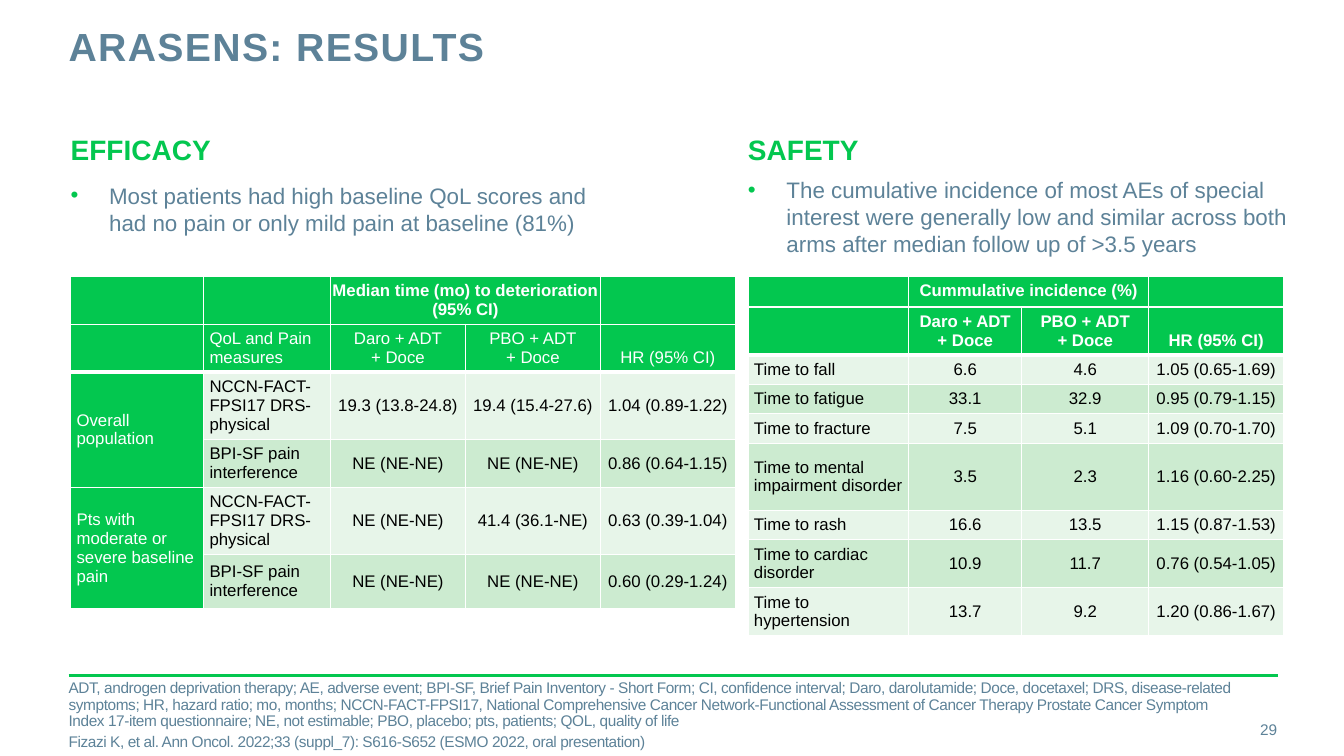
from dataclasses import dataclass

from lxml.etree import SubElement
from pptx import Presentation
from pptx.dml.color import RGBColor as Color
from pptx.enum.text import MSO_ANCHOR as Anchor, MSO_AUTO_SIZE as AutoSize, PP_ALIGN as Align
from pptx.oxml.ns import qn
from pptx.util import Cm, Pt


@dataclass(frozen=True)
class Theme:
    font: str = "Arial"
    green: str = "03C74F"
    slate: str = "5D8298"
    light: str = "E7F5E9"
    dark: str = "CCEBD0"
    white: str = "FFFFFF"
    black: str = "000000"
    title: int = 28
    heading: int = 20
    body: int = 16
    table: int = 12
    note: int = 11


THEME = Theme()
COMPARISON_LAYOUT = 4
HEADER_ROWS = 2

EFFICACY_COLUMNS = [3.35, 3.2, 3.4, 3.4, 3.4]
EFFICACY_HEIGHTS = [1.2, 1.2, 1.69, 1.2, 1.69, 1.37]
EFFICACY_ROWS = [
    ["", "", "Median time (mo) to deterioration\n(95% CI)", "", ""],
    ["", "QoL and Pain measures", "Daro + ADT\n+ Doce", "PBO + ADT\n+ Doce", "HR (95% CI)"],
    ["Overall\npopulation", "NCCN-FACT-FPSI17 DRS-physical",
     "19.3 (13.8-24.8)", "19.4 (15.4-27.6)", "1.04 (0.89-1.22)"],
    ["", "BPI-SF pain interference", "NE (NE-NE)", "NE (NE-NE)", "0.86 (0.64-1.15)"],
    ["Pts with moderate or severe baseline pain", "NCCN-FACT-FPSI17 DRS-physical",
     "NE (NE-NE)", "41.4 (36.1-NE)", "0.63 (0.39-1.04)"],
    ["", "BPI-SF pain interference", "NE (NE-NE)", "NE (NE-NE)", "0.60 (0.29-1.24)"],
]

SAFETY_COLUMNS = [4.05, 2.85, 3.2, 3.4]
SAFETY_HEIGHTS = [0.74, 1.2, 0.74, 0.74, 0.74, 1.69, 0.74, 1.2, 1.2]
SAFETY_ROWS = [
    ["", "Cummulative incidence (%)", "", ""],
    ["", "Daro + ADT\n+ Doce", "PBO + ADT\n+ Doce", "HR (95% CI)"],
    ["Time to fall", "6.6", "4.6", "1.05 (0.65-1.69)"],
    ["Time to fatigue", "33.1", "32.9", "0.95 (0.79-1.15)"],
    ["Time to fracture", "7.5", "5.1", "1.09 (0.70-1.70)"],
    ["Time to mental impairment disorder", "3.5", "2.3", "1.16 (0.60-2.25)"],
    ["Time to rash", "16.6", "13.5", "1.15 (0.87-1.53)"],
    ["Time to cardiac disorder", "10.9", "11.7", "0.76 (0.54-1.05)"],
    ["Time to hypertension", "13.7", "9.2", "1.20 (0.86-1.67)"],
]

NOTES = [
    "ADT, androgen deprivation therapy; AE, adverse event; BPI-SF, Brief Pain Inventory - Short Form; "
    "CI, confidence interval; Daro, darolutamide; Doce, docetaxel; DRS, disease-related symptoms; "
    "HR, hazard ratio; mo, months; NCCN-FACT-FPSI17, National Comprehensive Cancer Network-Functional "
    "Assessment of Cancer Therapy Prostate Cancer Symptom Index 17-item questionnaire; "
    "NE, not estimable; PBO, placebo; pts, patients; QOL, quality of life",
    "Fizazi K, et al. Ann Oncol. 2022;33 (suppl_7): S616-S652 (ESMO 2022, oral presentation)",
]


def write(para, text, size, color, bold=False, align=Align.LEFT, line=None, after=0, tracking=None):
    """Fill a paragraph; line feeds become line breaks."""
    para.text = text
    para.alignment = align
    para.line_spacing = line
    para.space_before, para.space_after = Pt(0), Pt(after)
    for span in para.runs:
        span.font.name, span.font.size, span.font.bold = THEME.font, Pt(size), bold
        span.font.color.rgb = Color.from_string(color)
        if tracking:
            span.font._element.set("spc", str(round(tracking * 100)))
    if not text:
        SubElement(para._p, qn("a:endParaRPr"), sz=str(size * 100))


def place(shape, left, top, width, height, anchor=Anchor.TOP, insets=(0, 0, 0, 0)):
    """Position a text shape and return its first paragraph."""
    shape.left, shape.top, shape.width, shape.height = Cm(left), Cm(top), Cm(width), Cm(height)
    frame = shape.text_frame
    frame.word_wrap, frame.auto_size, frame.vertical_anchor = True, AutoSize.NONE, anchor
    frame.margin_left, frame.margin_top, frame.margin_right, frame.margin_bottom = map(Cm, insets)
    return frame.paragraphs[0]


def add_bullet(para):
    props = para._p.get_or_add_pPr()
    props.set("marL", str(Cm(0.97)))
    props.set("indent", str(-Cm(0.97)))
    SubElement(SubElement(props, qn("a:buClr")), qn("a:srgbClr"), val=THEME.green)
    SubElement(props, qn("a:buFont"), typeface=THEME.font)
    SubElement(props, qn("a:buChar"), char="•")


def add_borders(cell, row):
    """White grid, heavier between the header and the body."""
    heavy = {HEADER_ROWS - 1: "lnB", HEADER_ROWS: "lnT"}.get(row)
    for side in ("lnL", "lnR", "lnT", "lnB"):
        weight = Pt(3 if side == heavy else 1)
        edge = SubElement(cell._tc.get_or_add_tcPr(), qn(f"a:{side}"), w=str(weight))
        SubElement(SubElement(edge, qn("a:solidFill")), qn("a:srgbClr"), val=THEME.white)


def format_cell(cell, text, row, column, labels, bold_rows):
    header = row < HEADER_ROWS
    green = header or column < labels - 1
    add_borders(cell, row)
    cell.fill.solid()
    band = THEME.dark if row % 2 else THEME.light
    cell.fill.fore_color.rgb = Color.from_string(THEME.green if green else band)
    cell.margin_left = cell.margin_right = Cm(0 if row == 0 else 0.15)
    cell.margin_top = cell.margin_bottom = Cm(0.13)
    cell.vertical_anchor = (Anchor.TOP, Anchor.BOTTOM)[row] if header else Anchor.MIDDLE
    write(cell.text_frame.paragraphs[0], text, THEME.table,
          THEME.white if green else THEME.black, bold=row < bold_rows,
          align=Align.LEFT if column < labels else Align.CENTER)


def draw_table(slide, left, top, columns, heights, rows, labels, bold_rows):
    """Results table; the first `labels` columns hold row labels."""
    table = slide.shapes.add_table(len(rows), len(columns), Cm(left), Cm(top),
                                   Cm(sum(columns)), Cm(sum(heights))).table
    table.first_row = table.horz_banding = False
    for column, width in zip(table.columns, columns):
        column.width = Cm(width)
    for r, (height, texts) in enumerate(zip(heights, rows)):
        table.rows[r].height = Cm(height)
        for c, text in enumerate(texts):
            format_cell(table.cell(r, c), text, r, c, labels, bold_rows)
    table.cell(0, labels).merge(table.cell(0, labels + 1))
    return table


def draw_column(slide, holders, left, top, list_top, list_height, heading, point):
    """Heading with a bulleted finding below it."""
    title, finding = holders
    write(place(title, left, top, 13.6, 1), heading, THEME.heading, THEME.green, bold=True)
    para = place(finding, left, list_top, 14.17, list_height, insets=(0, 0.13, 0.25, 0.13))
    add_bullet(para)
    write(para, point, THEME.body, THEME.slate)


def draw_footer(slide, left, top, width):
    """Rule, abbreviations, citation and page number."""
    rule = slide.shapes.add_connector(1, Cm(left), Cm(top), Cm(left + width), Cm(top))
    rule.line.color.rgb = Color.from_string(THEME.green)
    rule.line.width = Pt(2)
    SubElement(rule._element.spPr, qn("a:effectLst"))

    notes = slide.shapes.add_textbox(0, 0, 0, 0)
    para = place(notes, left, top + 0.56, 29.62, 0.91, Anchor.MIDDLE)
    for index, note in enumerate(NOTES):
        para = notes.text_frame.add_paragraph() if index else para
        write(para, note, THEME.note, THEME.slate, line=0.9, after=3, tracking=-0.3)

    number = slide.shapes.add_textbox(0, 0, 0, 0)
    para = place(number, left + width - 2.2, top + 0.84, 2.18, 1.02, Anchor.MIDDLE)
    write(para, "29", THEME.note, THEME.slate, align=Align.RIGHT)


def draw_results(deck):
    slide = deck.slides.add_slide(deck.slide_layouts[COMPARISON_LAYOUT])
    title, *holders = slide.placeholders
    write(place(title, 1.73, 0.69, 24.28, 2.24), "ARASENS: RESULTS", THEME.title,
          THEME.slate, bold=True, line=Pt(30), tracking=1)

    # Efficacy
    draw_column(slide, holders[:2], 1.78, 3.33, 4.45, 1.63, "EFFICACY",
                "Most patients had high baseline QoL scores and had no pain or only mild pain "
                "at baseline (81%)")
    efficacy = draw_table(slide, 1.78, 6.96, EFFICACY_COLUMNS, EFFICACY_HEIGHTS, EFFICACY_ROWS,
                          labels=2, bold_rows=1)
    for row in (2, 4):
        efficacy.cell(row, 0).merge(efficacy.cell(row + 1, 0))

    # Safety
    draw_column(slide, holders[2:], 18.85, 3.33, 4.32, 2.39, "SAFETY",
                "The cumulative incidence of most AEs of special interest were generally low and "
                "similar across both arms after median follow up of >3.5 years")
    draw_table(slide, 18.85, 6.96, SAFETY_COLUMNS, SAFETY_HEIGHTS, SAFETY_ROWS,
               labels=1, bold_rows=2)

    draw_footer(slide, 1.73, 17.02, 30.48)


def main():
    deck = Presentation()
    deck.slide_width, deck.slide_height = Cm(33.87), Cm(19.05)
    draw_results(deck)
    deck.save("out.pptx")


if __name__ == "__main__":
    main()
